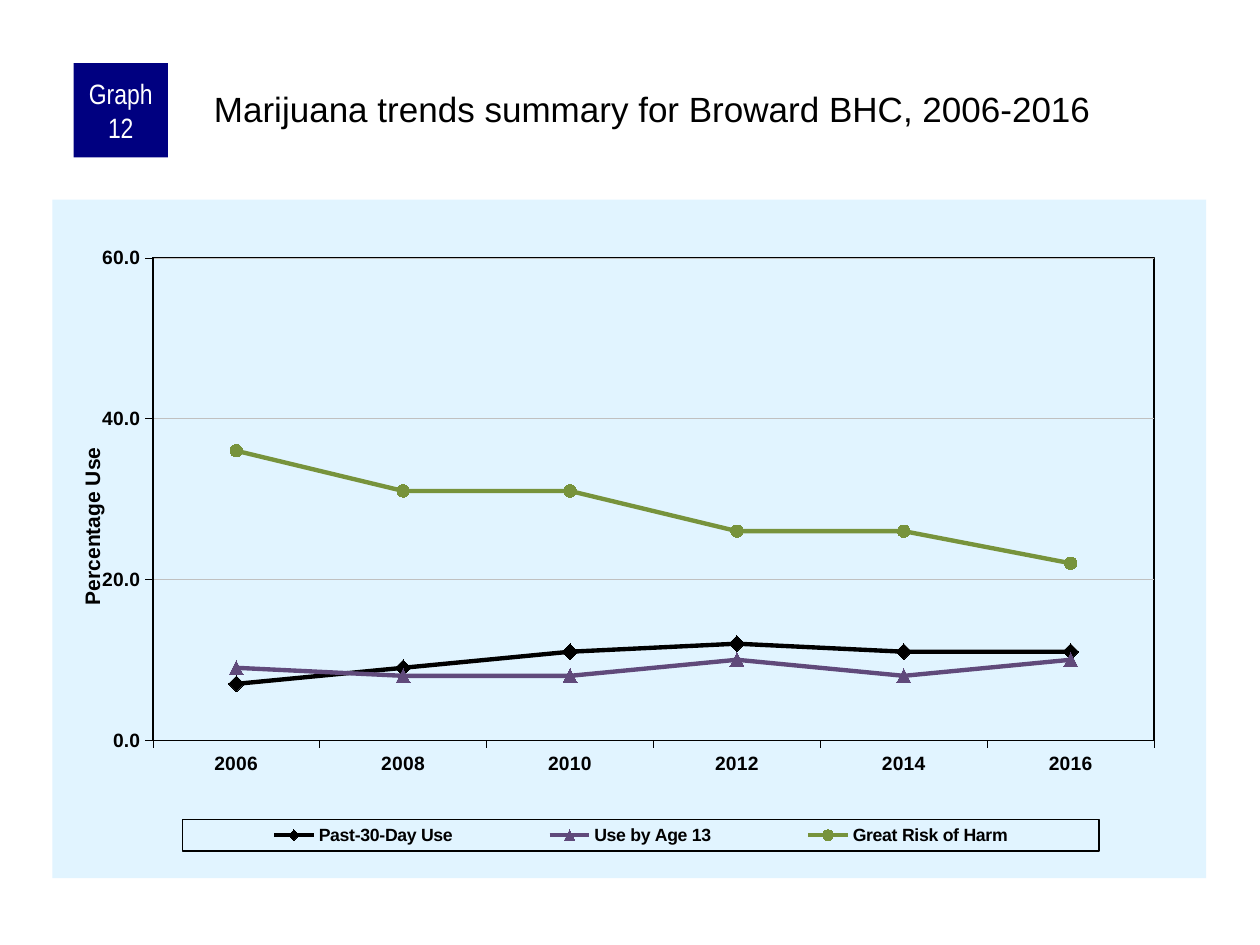
import pptx
import pptx.chart.data
import pptx.dml.color
import pptx.enum.chart
import pptx.enum.text
import pptx.enum.shapes
import pptx.oxml
import pptx.oxml.ns
import pptx.util

PX = 9525  # EMU in one px, 96 px to the inch
RGBColor = pptx.dml.color.RGBColor
BLACK = RGBColor(0x00, 0x00, 0x00)
WHITE = RGBColor(0xFF, 0xFF, 0xFF)
NAVY = RGBColor(0x00, 0x00, 0x80)
PALE_BLUE = RGBColor(0xE1, 0xF4, 0xFF)
GRID_GRAY = RGBColor(0xC0, 0xC0, 0xC0)
PURPLE = RGBColor(0x60, 0x4A, 0x7B)
GREEN = RGBColor(0x77, 0x93, 0x3C)

YEARS = ["2006", "2008", "2010", "2012", "2014", "2016"]
MARKER = pptx.enum.chart.XL_MARKER_STYLE
SERIES = [
    ("Past-30-Day Use", (7, 9, 11, 12, 11, 11), BLACK, MARKER.DIAMOND, 9),
    ("Use by Age 13", (9, 8, 8, 10, 8, 10), PURPLE, MARKER.TRIANGLE, 8),
    ("Great Risk of Harm", (36, 31, 31, 26, 26, 22), GREEN, MARKER.CIRCLE, 7),
]
qn = pptx.oxml.ns.qn
NAMESPACES = pptx.oxml.ns.nsdecls("c", "a")


def px(*lengths):
    return [length * PX for length in lengths]


def set_font(font, size, color=BLACK, bold=False, name="Arial"):
    font.name, font.size, font.bold = name, pptx.util.Pt(size), bold
    font.color.rgb = color


def set_line(line, color, width):
    line.color.rgb = color
    line.width = pptx.util.Pt(width)


def set_margins(frame, left, top, right, bottom):
    (frame.margin_left, frame.margin_top,
     frame.margin_right, frame.margin_bottom) = px(left, top, right, bottom)


def add_run(frame, text, size, color, name, alignment):
    paragraph = frame.paragraphs[0]
    paragraph.alignment = alignment
    run = paragraph.add_run()
    run.text = text
    set_font(run.font, size, color, name=name)


def add_title(slide, text):
    title = slide.shapes.title
    title.left, title.top, title.width, title.height = px(160, 64, 760, 80)
    frame = title.text_frame
    frame.word_wrap = True
    frame.auto_size = pptx.enum.text.MSO_AUTO_SIZE.NONE
    frame.vertical_anchor = pptx.enum.text.MSO_ANCHOR.TOP
    set_margins(frame, 3, 3, 0, 0)
    add_run(frame, text, 20, BLACK, "Arial", pptx.enum.text.PP_ALIGN.LEFT)


def add_badge(slide, text):
    badge = slide.shapes.add_shape(
        pptx.enum.shapes.MSO_SHAPE.RECTANGLE, *px(56, 48, 72, 72))
    badge.shadow.inherit = False
    badge.fill.solid()
    badge.fill.fore_color.rgb = NAVY
    badge.line.fill.background()
    frame = badge.text_frame
    frame.word_wrap = True
    frame.vertical_anchor = pptx.enum.text.MSO_ANCHOR.MIDDLE
    set_margins(frame, 5, 0, 5, 0)
    add_run(frame, text, 16, WHITE, "Arial Narrow",
            pptx.enum.text.PP_ALIGN.CENTER)


def make_layout(x, y, width=None, height=None, inner=False):
    """Manual layout in fractions of the chart's size."""
    parts = '<c:layoutTarget val="inner"/>' if inner else ""
    parts += '<c:xMode val="edge"/><c:yMode val="edge"/>'
    for tag, value in zip("xywh", (x, y, width, height)):
        if value is not None:
            parts += f'<c:{tag} val="{value}"/>'
    return pptx.oxml.parse_xml(
        f"<c:layout {NAMESPACES}><c:manualLayout>{parts}"
        "</c:manualLayout></c:layout>")


def make_area_format(fill=None, line=None):
    def paint(color):
        if color is None:
            return "<a:noFill/>"
        return f'<a:solidFill><a:srgbClr val="{color}"/></a:solidFill>'
    return pptx.oxml.parse_xml(
        f'<c:spPr {NAMESPACES}>{paint(fill)}<a:ln w="9525">{paint(line)}'
        "</a:ln></c:spPr>")


def replace_layout(parent, previous, layout):
    for old in parent.findall(qn("c:layout")):
        parent.remove(old)
    if previous is None:
        parent.insert(0, layout)
    else:
        parent.find(qn(previous)).addnext(layout)


def find_part(chart, tag):
    return chart.element.find(".//" + qn(tag))


def format_axis(axis):
    axis.major_tick_mark = pptx.enum.chart.XL_TICK_MARK.OUTSIDE
    axis.minor_tick_mark = pptx.enum.chart.XL_TICK_MARK.NONE
    set_font(axis.tick_labels.font, 11, bold=True)
    set_line(axis.format.line, BLACK, 0.25)


def format_value_axis(chart):
    axis = chart.value_axis
    format_axis(axis)
    axis.minimum_scale, axis.maximum_scale, axis.major_unit = 0, 60, 20
    axis.tick_labels.number_format = "0.0"
    axis.tick_labels.number_format_is_linked = False
    axis.has_major_gridlines = True
    set_line(axis.major_gridlines.format.line, GRID_GRAY, 0.25)
    run = axis.axis_title.text_frame.paragraphs[0].add_run()
    run.text = "Percentage Use"
    set_font(run.font, 12, bold=True)
    title = find_part(chart, "c:valAx").find(qn("c:title"))
    replace_layout(title, "c:tx", make_layout(0.02, 0.36))


def format_series(series, color, style, size):
    series.smooth = False
    set_line(series.format.line, color, 2.5)
    marker = series.marker
    marker.style, marker.size = style, size
    marker.format.fill.solid()
    marker.format.fill.fore_color.rgb = color
    set_line(marker.format.line, color, 0.75)


def add_legend(chart):
    chart.has_legend = True
    chart.legend.position = pptx.enum.chart.XL_LEGEND_POSITION.RIGHT
    chart.legend.include_in_layout = False
    set_font(chart.legend.font, 10.1, bold=True)
    legend = find_part(chart, "c:legend")
    replace_layout(legend, "c:legendPos", make_layout(0.113, 0.914, 0.794, 0.046))
    legend.find(qn("c:txPr")).addprevious(make_area_format(line=BLACK))


def add_trend_chart(slide):
    data = pptx.chart.data.CategoryChartData(number_format="0.0")
    data.categories = YEARS
    for name, values, *_ in SERIES:
        data.add_series(name, values)
    chart = slide.shapes.add_chart(
        pptx.enum.chart.XL_CHART_TYPE.LINE_MARKERS,
        *px(40, 152, 879, 517), data).chart
    chart.has_title = False
    set_font(chart.font, 8)
    chart.plots[0].vary_by_categories = False
    format_axis(chart.category_axis)
    format_value_axis(chart)
    for series, (_, _, color, style, size) in zip(chart.plots[0].series, SERIES):
        format_series(series, color, style, size)
    add_legend(chart)

    # Chart background and framed plot area
    find_part(chart, "c:chart").addnext(make_area_format(fill=PALE_BLUE))
    plot_area = find_part(chart, "c:plotArea")
    replace_layout(plot_area, None,
                   make_layout(0.087, 0.086, 0.868, 0.711, inner=True))
    plot_area.append(make_area_format(line=BLACK))


def main():
    presentation = pptx.Presentation()
    presentation.slide_width, presentation.slide_height = px(960, 720)
    slide = presentation.slides.add_slide(presentation.slide_layouts[5])
    add_badge(slide, "Graph 12")
    add_title(slide, "Marijuana trends summary for Broward BHC, 2006-2016")
    add_trend_chart(slide)
    presentation.save("out.pptx")


if __name__ == "__main__":
    main()
